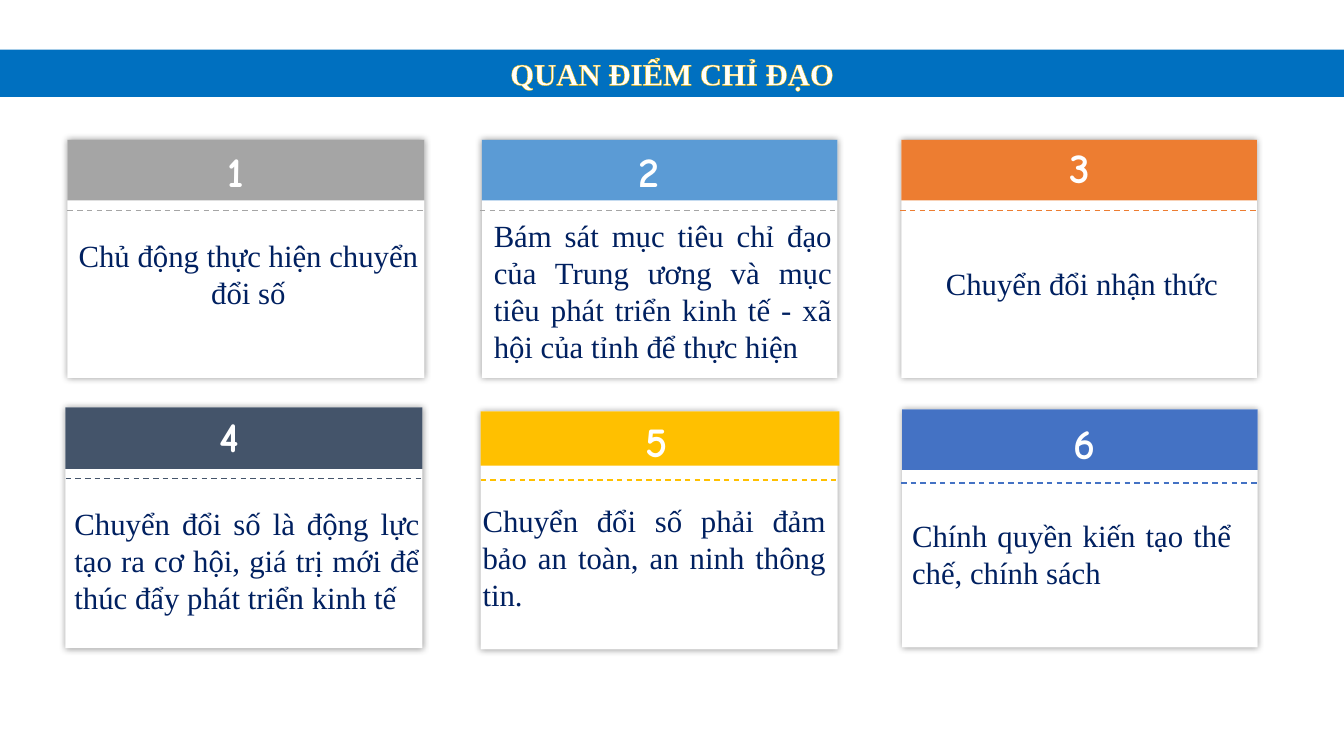
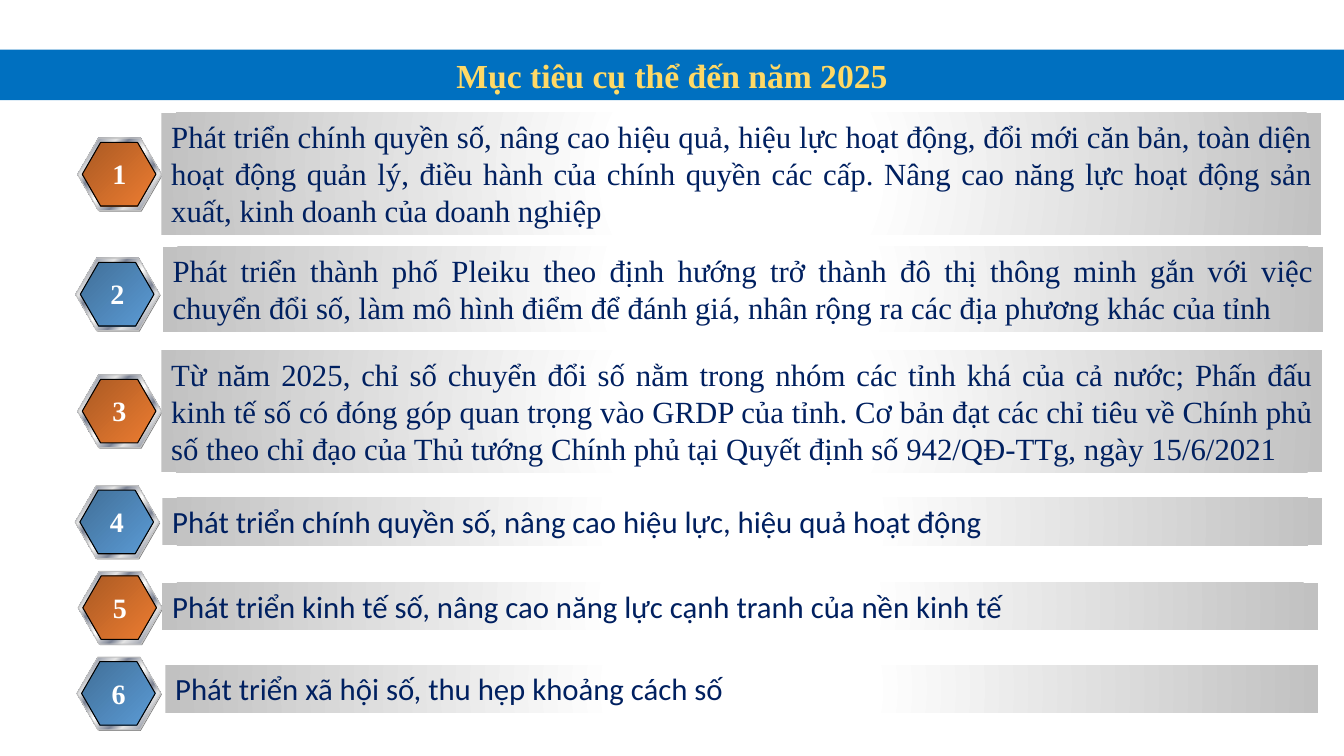
from lxml import etree
from pptx import Presentation
from pptx.dml.color import RGBColor
from pptx.enum.dml import MSO_LINE
from pptx.enum.shapes import MSO_CONNECTOR, MSO_SHAPE
from pptx.enum.text import MSO_ANCHOR, PP_ALIGN
from pptx.oxml.ns import qn
from pptx.util import Pt

RECTANGLE, HEXAGON = MSO_SHAPE.RECTANGLE, MSO_SHAPE.HEXAGON
STRAIGHT, DASH = MSO_CONNECTOR.STRAIGHT, MSO_LINE.DASH
TOP, MIDDLE = MSO_ANCHOR.TOP, MSO_ANCHOR.MIDDLE
LEFT, CENTER, JUSTIFY = PP_ALIGN.LEFT, PP_ALIGN.CENTER, PP_ALIGN.JUSTIFY

SLIDE_WIDTH, SLIDE_HEIGHT = 960, 540
SERIF, SANS, ROUND = "Times New Roman", "Calibri", "Comic Neue"
COLORS = {
    "band": "0070C0", "white": "FFFFFF", "black": "000000", "navy": "002060",
    "gray": "A5A5A5", "blue": "5B9BD5", "orange": "ED7D31", "slate": "44546A",
    "gold": "FFC000", "royal": "4472C4", "yellow": "FFD966", "cream": "FFF2CC",
    "badge_back": "808080", "badge_edge": "C0C0C0", "bar_edge": "C1C1C1",
    "dark_orange": "AA5923", "dark_blue": "416F98",
    "steel": "7D8496", "silver": "E6E6E6",
}
TITLE_GRADIENT = [(0, "gold"), (4, "yellow"), (87, "cream")]
BAR_GRADIENT = [(22, "white"), (100, "bar_edge")]
METAL_GRADIENT = [
    (0, "silver"), (8, "steel"), (26, "silver"), (34, "steel"), (46, "silver"),
    (50, "white"), (54, "silver"), (66, "steel"), (74, "silver"),
    (93, "steel"), (100, "silver"),
]
BADGE_GRADIENTS = [
    [(0, "dark_orange"), (100, "orange")],
    [(0, "dark_blue"), (100, "blue")],
]


def color(name):
    return RGBColor.from_string(COLORS[name])


def add_element(parent, tag, **attributes):
    element = etree.SubElement(parent, qn(tag))
    for name, value in attributes.items():
        element.set(name, str(value))
    return element


def set_gradient(fill, properties, stops, angle=None):
    """Linear at the angle in degrees, or circular from the centre."""
    fill.gradient()
    gradient = properties.find(qn("a:gradFill"))
    for child in list(gradient):
        gradient.remove(child)
    stop_list = add_element(gradient, "a:gsLst")
    for position, name in stops:
        stop = add_element(stop_list, "a:gs", pos=position * 1000)
        add_element(stop, "a:srgbClr", val=COLORS[name])
    if angle is None:
        circle = add_element(gradient, "a:path", path="circle")
        add_element(circle, "a:fillToRect", l=50000, t=50000, r=50000, b=50000)
    else:
        add_element(gradient, "a:lin", ang=angle * 60000, scaled=0)


def add_block(shapes, kind, box, fill, line=None, angle=None):
    """Preset shape; fill is a colour name or a list of gradient stops."""
    shape = shapes.add_shape(kind, *map(Pt, box))
    shape.shadow.inherit = False
    if isinstance(fill, str):
        shape.fill.solid()
        shape.fill.fore_color.rgb = color(fill)
    else:
        set_gradient(shape.fill, shape._element.spPr, fill, angle)
    if line:
        shape.line.color.rgb = color(line)
        shape.line.width = Pt(0.75)
    else:
        shape.line.fill.background()
    return shape


def write(shape, text, *, size=22, font=SERIF, fill="navy", bold=False,
          align=LEFT, anchor=TOP, wrap=True, outline=None):
    frame = shape.text_frame
    frame.word_wrap = wrap
    frame.vertical_anchor = anchor
    paragraph = frame.paragraphs[0]
    paragraph.alignment = align
    run = paragraph.add_run()
    run.text = text
    run.font.size, run.font.name, run.font.bold = Pt(size), font, bold
    properties = run._r.get_or_add_rPr()
    if isinstance(fill, str):
        run.font.color.rgb = color(fill)
    else:
        set_gradient(run.font.fill, properties, fill, 90)
    if outline:
        line = add_element(properties, "a:ln", w=Pt(1))
        solid = add_element(line, "a:solidFill")
        add_element(solid, "a:srgbClr", val=COLORS[outline])
        properties.insert(0, line)


def add_text(shapes, box, text, **text_format):
    write(shapes.add_textbox(*map(Pt, box)), text, **text_format)


def add_glow(shape):
    effects = shape._element.spPr.find(qn("a:effectLst"))
    shadow = add_element(effects, "a:outerShdw", blurRad=Pt(5), dist=0, dir=0,
                         algn="ctr", rotWithShape=0)
    shadow_color = add_element(shadow, "a:srgbClr", val=COLORS["black"])
    add_element(shadow_color, "a:alpha", val=40000)


def add_dashed_line(shapes, left, top, width, line):
    connector = shapes.add_connector(
        STRAIGHT, Pt(left), Pt(top), Pt(left + width), Pt(top))
    connector.line.color.rgb = color(line)
    connector.line.width = Pt(1)
    connector.line.dash_style = DASH
    add_element(connector._element.spPr, "a:effectLst")


def add_titled_slide(presentation, title, height, size, fill):
    slide = presentation.slides.add_slide(presentation.slide_layouts[6])
    band = add_block(slide.shapes, RECTANGLE,
                     (0, 35.5, SLIDE_WIDTH, height), "band")
    write(band, title, size=size, fill=fill, bold=True, align=CENTER,
          outline="gold")
    return slide


def add_card(slide, number, card):
    """White card; text and number places are relative to its corner."""
    left, top, width, height = card["box"]
    shapes = slide.shapes.add_group_shape().shapes
    add_glow(add_block(shapes, RECTANGLE, card["box"], "white"))
    header_width, header_height = card.get("header", (width, 43.2))
    add_block(shapes, RECTANGLE, (left, top, header_width, header_height),
              card["fill"])
    rule_left, rule_top = card["rule"]
    add_dashed_line(shapes, left + rule_left, top + rule_top, width,
                    card.get("line", card["fill"]))

    # Wording and number
    text_left, text_top, text_width, text_height = card["text_box"]
    add_text(slide.shapes,
             (left + text_left, top + text_top, text_width, text_height),
             card["text"], align=card.get("align", JUSTIFY), anchor=MIDDLE)
    number_left, number_top = card["number"]
    add_text(slide.shapes, (left + number_left, top + number_top, 32.4, 43.9),
             str(number), size=30, font=ROUND, fill="white", bold=True,
             align=CENTER, anchor=MIDDLE)


def add_badge(slide, left, top, number):
    """Metal hexagon with a coloured core and its number."""
    shapes = slide.shapes.add_group_shape().shapes
    core = BADGE_GRADIENTS[(number - 1) % 2]
    layers = [
        ((left + 0.7, top + 0.7, 60, 52), "badge_back", None),
        ((left, top, 60, 52), METAL_GRADIENT, "badge_edge"),
        ((left + 3.4, top + 3.2, 52.6, 45.4), core, "black"),
    ]
    for box, fill, line in layers:
        hexagon = add_block(shapes, HEXAGON, box, fill, line, 45)
        hexagon.adjustments[0] = 0.289
    add_text(slide.shapes, (left + 17.6, top + 10, 24.5, 31.7), str(number),
             size=20, fill="white", bold=True, align=CENTER, wrap=False)


def add_goal(slide, number, badge, box, text, **text_format):
    add_badge(slide, *badge, number)
    bar = add_block(slide.shapes, RECTANGLE, box, BAR_GRADIENT)
    write(bar, text, **text_format)


CARDS = [
    dict(box=(48.2, 100, 255, 170), fill="gray", rule=(0, 50.4),
         text_box=(0.7, 65.5, 257, 60.5), number=(103.7, 0), align=CENTER,
         text="Chủ động thực hiện chuyển đổi số"),
    dict(box=(344.2, 100, 254, 170), fill="blue", line="gray",
         rule=(-1.4, 50.4), text_box=(1.4, 51, 255.6, 113.8),
         number=(103, 0),
         text="Bám sát mục tiêu chỉ đạo của Trung ương và mục tiêu phát triển "
              "kinh tế - xã hội của tỉnh để thực hiện"),
    dict(box=(643.8, 100, 254, 170), fill="orange", rule=(-0.8, 50.4),
         text_box=(3.6, 85.7, 250.6, 33.8), number=(111.6, -2.9),
         align=CENTER, text="Chuyển đổi nhận thức"),
    dict(box=(46.8, 291, 255, 172), fill="slate", header=(255, 43.9),
         rule=(0, 51), text_box=(-0.7, 65.5, 260.6, 87),
         number=(100.8, -1.5),
         text="Chuyển đổi số là động lực tạo ra cơ hội, giá trị mới để thúc "
              "đẩy phát triển kinh tế"),
    dict(box=(343.4, 293.8, 255, 170), fill="gold", header=(256.3, 38.9),
         rule=(0, 49), text_box=(-5.8, 60.5, 259.2, 87),
         number=(109.5, -0.7),
         text="Chuyển đổi số phải đảm bảo an toàn, an ninh thông tin."),
    dict(box=(644.4, 292.4, 254, 170), fill="royal", rule=(-0.8, 52.5),
         text_box=(0, 72.7, 242, 60.5), number=(113.8, 2.1),
         text="Chính quyền kiến tạo thể chế, chính sách"),
]

# Badge corner, bar box, font, alignment, wording
GOALS = [
    ((55.4, 98.6), (115.2, 80.6, 828.7, 87.1), SERIF, JUSTIFY,
     "Phát triển chính quyền số, nâng cao hiệu quả, hiệu lực hoạt động, đổi "
     "mới căn bản, toàn diện hoạt động quản lý, điều hành của chính quyền các "
     "cấp. Nâng cao năng lực hoạt động sản xuất, kinh doanh của doanh nghiệp"),
    ((54, 184.3), (116.2, 176.4, 828.7, 60.5), SERIF, JUSTIFY,
     "Phát triển thành phố Pleiku theo định hướng trở thành đô thị thông minh "
     "gắn với việc chuyển đổi số, làm mô hình điểm để đánh giá, nhân rộng ra "
     "các địa phương khác của tỉnh"),
    ((55.4, 267.8), (115.2, 250.3, 829.4, 87.1), SERIF, JUSTIFY,
     "Từ năm 2025, chỉ số chuyển đổi số nằm trong nhóm các tỉnh khá của cả "
     "nước; Phấn đấu kinh tế số có đóng góp quan trọng vào GRDP của tỉnh. Cơ "
     "bản đạt các chỉ tiêu về Chính phủ số theo chỉ đạo của Thủ tướng Chính "
     "phủ tại Quyết định số 942/QĐ-TTg, ngày 15/6/2021"),
    ((53.7, 347), (115.9, 355.7, 828.7, 33.8), SANS, LEFT,
     "Phát triển chính quyền số, nâng cao hiệu lực, hiệu quả hoạt động"),
    ((55.8, 408.2), (115.9, 416.2, 825.8, 33.8), SANS, LEFT,
     "Phát triển kinh tế số, nâng cao năng lực cạnh tranh của nền kinh tế"),
    ((54.9, 469.4), (118.1, 475.2, 823.7, 33.8), SANS, LEFT,
     "Phát triển xã hội số, thu hẹp khoảng cách số"),
]


def build_viewpoints(presentation):
    slide = add_titled_slide(presentation, "QUAN ĐIỂM CHỈ ĐẠO", 33.8, 22,
                             "white")
    for number, card in enumerate(CARDS, 1):
        add_card(slide, number, card)


def build_goals(presentation):
    slide = add_titled_slide(presentation, "Mục tiêu cụ thể đến năm 2025", 36,
                             24, TITLE_GRADIENT)
    for number, (badge, box, font, align, text) in enumerate(GOALS, 1):
        add_goal(slide, number, badge, box, text, font=font, align=align)


def main():
    presentation = Presentation()
    presentation.slide_width = Pt(SLIDE_WIDTH)
    presentation.slide_height = Pt(SLIDE_HEIGHT)
    build_viewpoints(presentation)
    build_goals(presentation)
    presentation.save("out.pptx")


if __name__ == "__main__":
    main()
